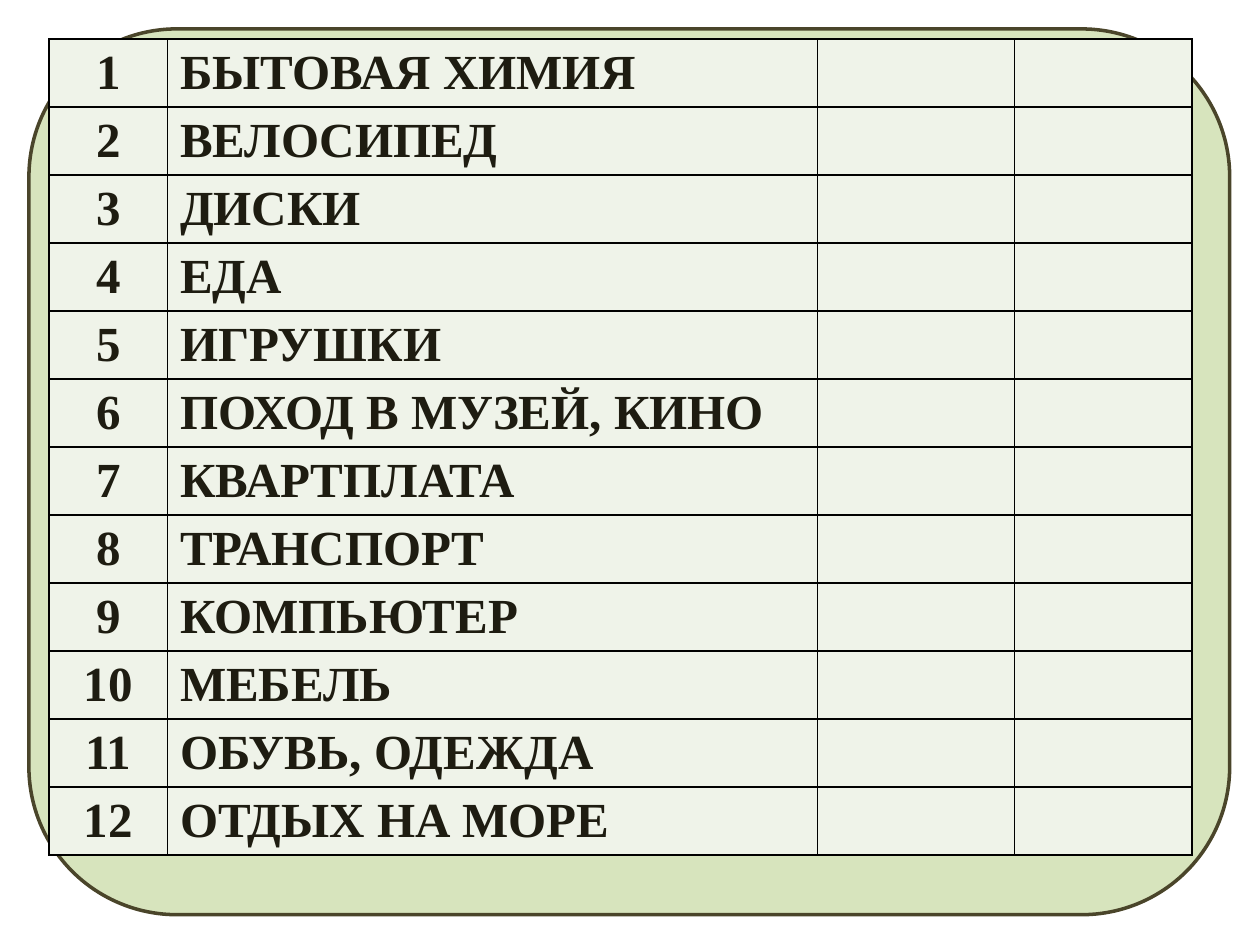
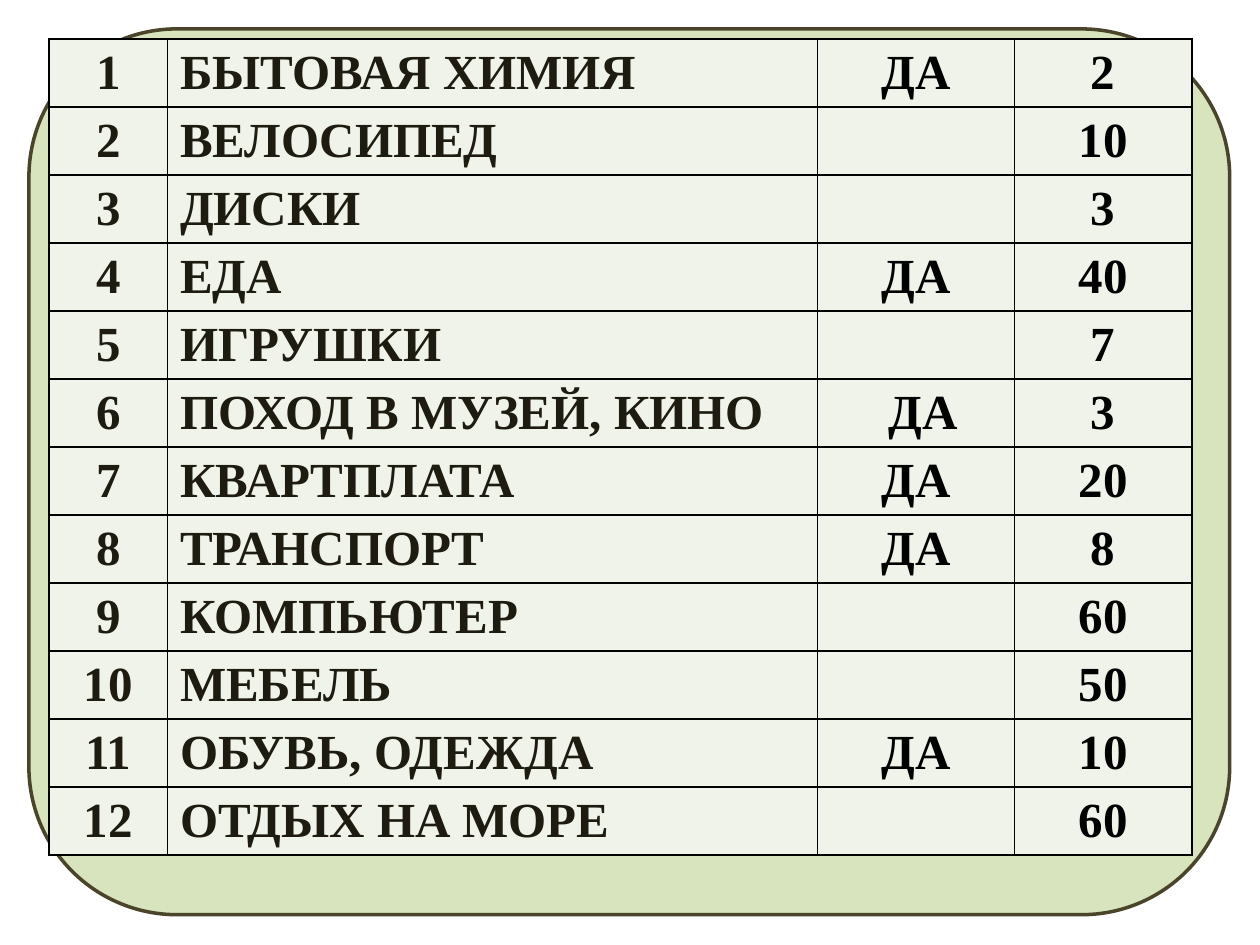
from dataclasses import dataclass

from lxml import etree
from pptx import Presentation
from pptx import util as u
from pptx.dml.color import RGBColor
from pptx.enum import shapes, text
from pptx.oxml import ns


@dataclass(frozen=True)
class Theme:
    font: str = "Times New Roman"
    size: float = 28
    panel: str = "D7E4BD"
    panel_line: str = "4A452A"
    panel_line_width: float = 2
    cell: str = "EFF3E9"
    border: str = "000000"
    border_width: float = 0.96
    item: str = "1E1C11"
    answer: str = "000000"


THEME = Theme()
PANEL_BOX = (0.23, 0.23, 9.53, 7.03)
TABLE_BOX = (0.39, 0.31, 9.07, 6.48)
COLUMN_WIDTHS = (0.94, 5.16, 1.56, 1.41)
ANSWER_MARGIN = 0.01
SHIFTED_MARGIN = 0.12

EXPENSES = (
    "БЫТОВАЯ ХИМИЯ", "ВЕЛОСИПЕД", "ДИСКИ", "ЕДА", "ИГРУШКИ", "ПОХОД В МУЗЕЙ, КИНО",
    "КВАРТПЛАТА", "ТРАНСПОРТ", "КОМПЬЮТЕР", "МЕБЕЛЬ", "ОБУВЬ, ОДЕЖДА", "ОТДЫХ НА МОРЕ",
)
COSTS = (2, 10, 3, 40, 7, 3, 20, 8, 60, 50, 10, 60)
NECESSARY = {1, 4, 6, 7, 8, 11}
SHIFTED_ANSWER = 6


def write_text(frame, content, *, color, align=text.PP_ALIGN.CENTER):
    paragraph = frame.paragraphs[0]
    paragraph.alignment = align
    run = paragraph.add_run()
    run.text = content
    run.font.name = THEME.font
    run.font.size = u.Pt(THEME.size)
    run.font.bold = True
    run.font.color.rgb = RGBColor.from_string(color)


def style_cell(cell):
    """Draw all four borders, then the fill, in the order the schema needs."""
    properties = cell._tc.get_or_add_tcPr()
    for side in ("a:lnL", "a:lnR", "a:lnT", "a:lnB"):
        line = etree.SubElement(properties, ns.qn(side), w=str(u.Pt(THEME.border_width)))
        fill = etree.SubElement(line, ns.qn("a:solidFill"))
        etree.SubElement(fill, ns.qn("a:srgbClr"), val=THEME.border)
    cell.fill.solid()
    cell.fill.fore_color.rgb = RGBColor.from_string(THEME.cell)


def add_panel(slide, box):
    panel = slide.shapes.add_shape(
        shapes.MSO_SHAPE.ROUNDED_RECTANGLE, *map(u.Inches, box))
    panel.adjustments[0] = 0.167
    panel.shadow.inherit = False
    panel.fill.solid()
    panel.fill.fore_color.rgb = RGBColor.from_string(THEME.panel)
    panel.line.color.rgb = RGBColor.from_string(THEME.panel_line)
    panel.line.width = u.Pt(THEME.panel_line_width)


def write_answer(cell, content, left_margin=ANSWER_MARGIN):
    cell.margin_left = u.Inches(left_margin)
    cell.margin_right = u.Inches(ANSWER_MARGIN)
    write_text(cell.text_frame, content, color=THEME.answer)


def add_expense_table(slide, box, with_answers):
    frame = slide.shapes.add_table(
        len(EXPENSES), len(COLUMN_WIDTHS), *map(u.Inches, box))
    table = frame.table
    for column, width in zip(table.columns, COLUMN_WIDTHS):
        column.width = u.Inches(width)
    for row in table.rows:
        row.height = u.Inches(box[3] / len(EXPENSES))
    for cell in table.iter_cells():
        style_cell(cell)
    for number, (expense, cost) in enumerate(zip(EXPENSES, COSTS), start=1):
        number_cell, expense_cell, necessary_cell, cost_cell = table.rows[number - 1].cells
        write_text(number_cell.text_frame, str(number), color=THEME.item)
        write_text(expense_cell.text_frame, expense, color=THEME.item,
                   align=text.PP_ALIGN.LEFT)
        if with_answers:
            write_answer(cost_cell, str(cost))
            if number in NECESSARY:
                margin = SHIFTED_MARGIN if number == SHIFTED_ANSWER else ANSWER_MARGIN
                write_answer(necessary_cell, "ДА", margin)


def add_expense_slide(presentation, with_answers):
    slide = presentation.slides.add_slide(presentation.slide_layouts[6])
    add_panel(slide, PANEL_BOX)
    add_expense_table(slide, TABLE_BOX, with_answers)


def main():
    presentation = Presentation()
    presentation.slide_width = u.Inches(10)
    presentation.slide_height = u.Inches(7.5)
    for with_answers in (False, True):
        add_expense_slide(presentation, with_answers)
    presentation.save("out.pptx")


if __name__ == "__main__":
    main()
